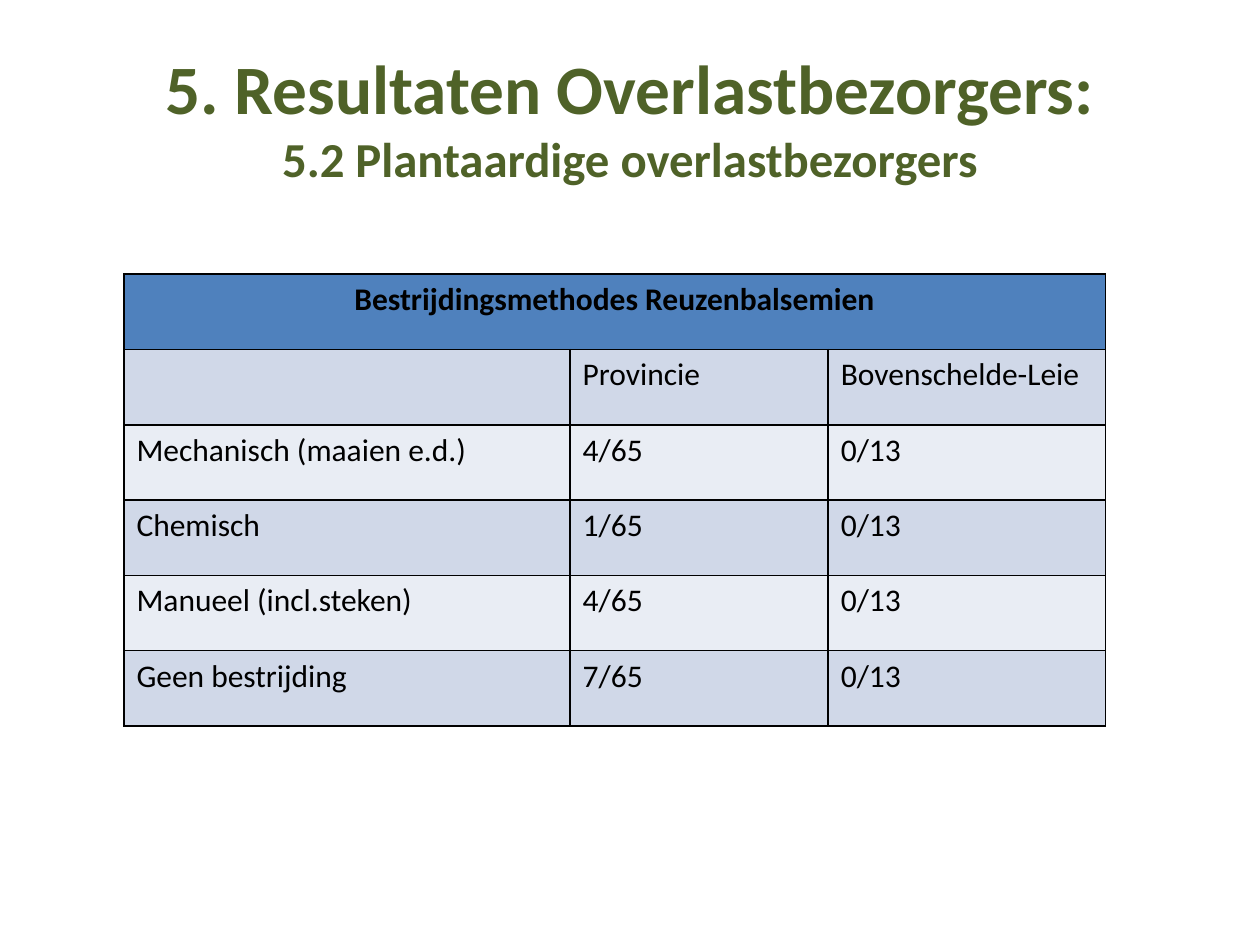
"""Build the slide on control methods for Himalayan balsam."""
from lxml.etree import SubElement
from pptx import Presentation
from pptx.dml.color import RGBColor
from pptx.enum.text import MSO_ANCHOR, PP_ALIGN
from pptx.oxml.ns import qn
from pptx.util import Pt

GREEN = RGBColor(0x4F, 0x62, 0x28)
BLACK = RGBColor(0, 0, 0)
BLUE = RGBColor(0x4F, 0x81, 0xBD)
BANDS = [RGBColor(0xE9, 0xED, 0xF4), RGBColor(0xD0, 0xD8, 0xE8)]

TITLE = [("5. Resultaten Overlastbezorgers:", 39.6),
         ("5.2 Plantaardige overlastbezorgers", 27.9)]
ROWS = [
    ("Bestrijdingsmethodes Reuzenbalsemien", "", ""),
    ("", "Provincie", "Bovenschelde-Leie"),
    ("Mechanisch (maaien e.d.)", "4/65", "0/13"),
    ("Chemisch", "1/65", "0/13"),
    ("Manueel (incl.steken)", "4/65", "0/13"),
    ("Geen bestrijding", "7/65", "0/13"),
]
COLS = [255, 147.5, 158.5]
LEFT, TOP, HIGH = 70.8, 156.7, 43.05


def write(para, text, size=18, color=BLACK, bold=False, align=PP_ALIGN.LEFT):
    para.alignment = align
    run = para.add_run()
    run.text = text
    font = run.font
    font.name, font.size, font.bold = "Calibri", Pt(size), bold
    font.color.rgb = color


def border(cell):
    props = cell._tc.get_or_add_tcPr()
    for side in ("lnL", "lnR", "lnT", "lnB"):
        line = SubElement(props, qn(f"a:{side}"), w=str(Pt(1)))
        fill = SubElement(line, qn("a:solidFill"))
        SubElement(fill, qn("a:srgbClr"), val=str(BLACK))


def main():
    deck = Presentation()
    deck.slide_width, deck.slide_height = Pt(720), Pt(540)
    slide = deck.slides.add_slide(deck.slide_layouts[6])

    frame = slide.shapes.add_textbox(Pt(36), Pt(21.6), Pt(648), Pt(90)).text_frame
    frame.word_wrap = True
    frame.vertical_anchor = MSO_ANCHOR.MIDDLE
    for i, (text, size) in enumerate(TITLE):
        para = frame.add_paragraph() if i else frame.paragraphs[0]
        write(para, text, size=size, color=GREEN, bold=True, align=PP_ALIGN.CENTER)

    table = slide.shapes.add_table(
        len(ROWS), len(COLS), Pt(LEFT), Pt(TOP),
        Pt(sum(COLS)), Pt(HIGH * len(ROWS))).table
    for col, width in zip(table.columns, COLS):
        col.width = Pt(width)
    for r, row in enumerate(ROWS):
        table.rows[r].height = Pt(HIGH)
        head = r == 0
        for c, text in enumerate(row):
            cell = table.cell(r, c)
            border(cell)
            cell.fill.solid()
            cell.fill.fore_color.rgb = BLUE if head else BANDS[r % 2]
            if text:
                write(cell.text_frame.paragraphs[0], text, bold=head,
                      align=PP_ALIGN.CENTER if head else PP_ALIGN.LEFT)
    table.cell(0, 0).merge(table.cell(0, len(COLS) - 1))
    deck.save("out.pptx")


if __name__ == "__main__":
    main()
